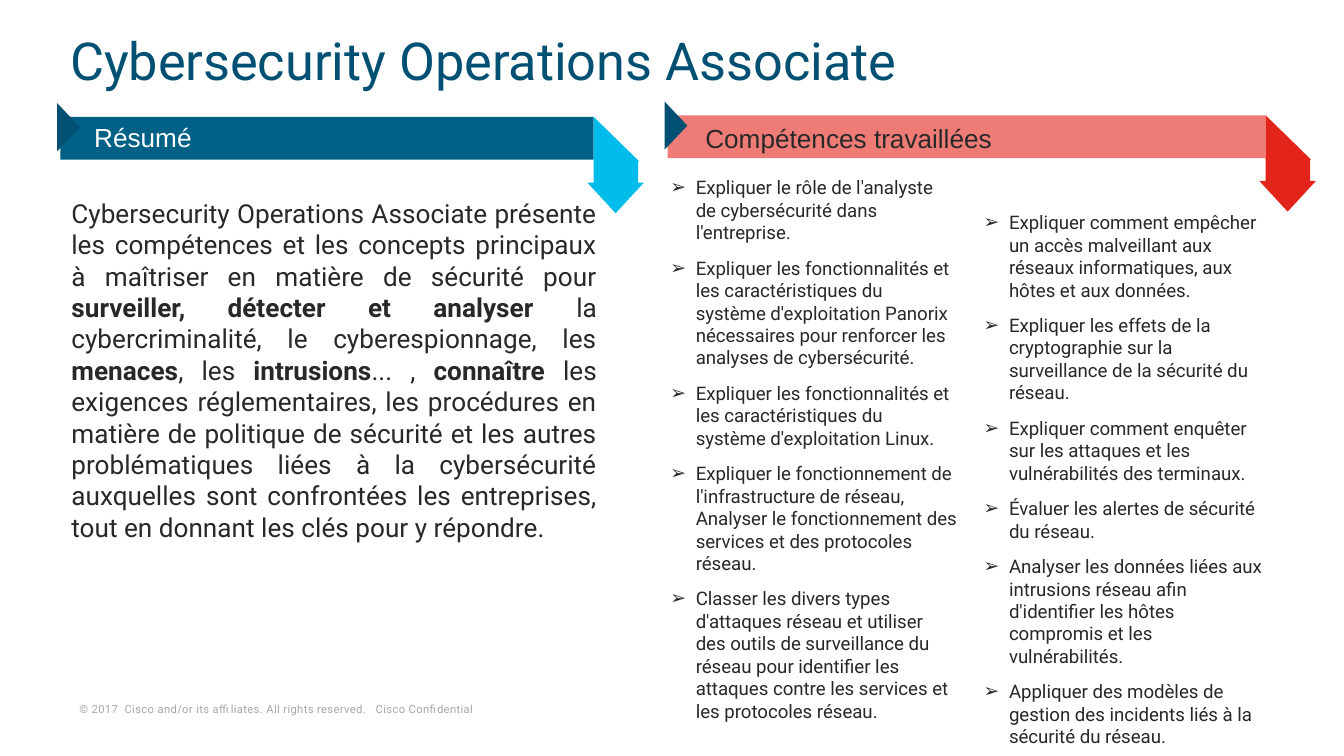
from lxml.etree import SubElement
from pptx import Presentation
from pptx.dml.color import RGBColor
from pptx.enum.shapes import MSO_SHAPE
from pptx.enum.text import MSO_ANCHOR, MSO_AUTO_SIZE, PP_ALIGN
from pptx.oxml.ns import qn
from pptx.util import Cm, Pt

NAVY, TEAL, CYAN = "005073", "006086", "00BCEB"
SALMON, RED = "EF7B76", "E3241B"
INK, WHITE, GREY = "282828", "FFFFFF", "A6A6A6"

TITLE_FONT = {"name": "Roboto", "size": Pt(28)}
BANNER_FONT = {"name": "Arial", "size": Pt(14)}
SUMMARY_FONT = {"name": "Roboto", "size": Pt(14)}
SKILL_FONT = {"name": "Roboto", "size": Pt(10)}
FOOTER_FONT = {"name": "Roboto", "size": Pt(6)}

SUMMARY = [
    ("Cybersecurity Operations Associate présente les compétences et les concepts "
     "principaux à maîtriser en matière de sécurité pour ", False),
    ("surveiller, détecter et analyser ", True),
    ("la cybercriminalité, le cyberespionnage, les ", False),
    ("menaces", True),
    (", les ", False),
    ("intrusions", True),
    ("... , ", False),
    ("connaître", True),
    (" les exigences réglementaires, les procédures en matière de politique de sécurité "
     "et les autres problématiques liées à la cybersécurité auxquelles sont confrontées "
     "les entreprises, tout en donnant les clés pour y répondre.", False),
]

FIRST_SKILLS = [
    "Expliquer le rôle de l'analyste de cybersécurité dans l'entreprise.",
    "Expliquer les fonctionnalités et les caractéristiques du système d'exploitation "
    "Panorix nécessaires pour renforcer les analyses de cybersécurité.",
    "Expliquer les fonctionnalités et les caractéristiques du système d'exploitation Linux.",
    "Expliquer le fonctionnement de l'infrastructure de réseau, Analyser le "
    "fonctionnement des services et des protocoles réseau.",
    "Classer les divers types d'attaques réseau et utiliser des outils de surveillance du "
    "réseau pour identifier les attaques contre les services et les protocoles réseau.",
]

SECOND_SKILLS = [
    "Expliquer comment empêcher un accès malveillant aux réseaux informatiques, "
    "aux hôtes et aux données.",
    "Expliquer les effets de la cryptographie sur la surveillance de la sécurité du réseau.",
    "Expliquer comment enquêter sur les attaques et les vulnérabilités des terminaux.",
    "Évaluer les alertes de sécurité du réseau.",
    "Analyser les données liées aux intrusions réseau afin d'identifier les hôtes "
    "compromis et les vulnérabilités.",
    "Appliquer des modèles de gestion des incidents liés à la sécurité du réseau.",
]


def set_color(color_format, hex_color):
    color_format.rgb = RGBColor.from_string(hex_color)


def format_font(font, values, hex_color):
    for name, value in values.items():
        setattr(font, name, value)
    set_color(font.color, hex_color)


def add_block(slide, kind, box, hex_color, rotation=0):
    shape = slide.shapes.add_shape(kind, *map(Cm, box))
    shape.shadow.inherit = False
    shape.rotation = rotation
    shape.fill.solid()
    set_color(shape.fill.fore_color, hex_color)
    shape.line.fill.background()


def add_text_frame(slide, box, anchor=MSO_ANCHOR.TOP, margin=0):
    frame = slide.shapes.add_textbox(*map(Cm, box)).text_frame
    values = {"word_wrap": True, "vertical_anchor": anchor}
    for side in ("left", "right", "top", "bottom"):
        values[f"margin_{side}"] = Cm(margin)
    for name, value in values.items():
        setattr(frame, name, value)
    return frame


def add_title(slide, box, text):
    title = slide.shapes.title
    for name, value in zip(("left", "top", "width", "height"), box):
        setattr(title, name, Cm(value))
    frame = title.text_frame
    frame.auto_size = MSO_AUTO_SIZE.NONE
    frame.vertical_anchor = MSO_ANCHOR.MIDDLE
    paragraph = frame.paragraphs[0]
    paragraph.alignment = PP_ALIGN.LEFT
    paragraph.line_spacing = 0.8
    run = paragraph.add_run()
    run.text = text
    format_font(run.font, TITLE_FONT, NAVY)


def add_banner(slide, box, text, text_offset, band_color, arrow_color, text_color):
    left, top, width, height = box
    end = left + width
    add_block(slide, MSO_SHAPE.RECTANGLE, box, band_color)
    add_block(slide, MSO_SHAPE.ISOSCELES_TRIANGLE,
              (left - 0.3, top - 0.02, 0.91, 0.43), NAVY, 90)
    add_block(slide, MSO_SHAPE.RIGHT_TRIANGLE, (end, top, 0.86, 0.84), arrow_color)
    add_block(slide, MSO_SHAPE.RECTANGLE, (end, top + 0.82, 0.84, 0.43), arrow_color)
    add_block(slide, MSO_SHAPE.ISOSCELES_TRIANGLE,
              (end - 0.12, top + 1.24, 1.07, 0.58), arrow_color, 180)
    offset_x, offset_y = text_offset
    frame = add_text_frame(slide, (left + offset_x, top + offset_y, width - offset_x, height),
                           MSO_ANCHOR.MIDDLE)
    run = frame.paragraphs[0].add_run()
    run.text = text
    format_font(run.font, BANNER_FONT, text_color)


def add_summary(slide, box, runs):
    paragraph = add_text_frame(slide, box).paragraphs[0]
    paragraph.alignment = PP_ALIGN.JUSTIFY
    for text, bold in runs:
        run = paragraph.add_run()
        run.text = text
        format_font(run.font, SUMMARY_FONT | {"bold": bold}, INK)


def add_skills(slide, box, skills):
    frame = add_text_frame(slide, box)
    for index, skill in enumerate(skills):
        paragraph = frame.add_paragraph() if index else frame.paragraphs[0]
        properties = paragraph._p.get_or_add_pPr()
        properties.set("marL", str(Cm(0.48)))
        properties.set("indent", str(-Cm(0.48)))
        SubElement(properties, qn("a:buFont"), typeface="Arial")
        SubElement(properties, qn("a:buChar"), char="➢")
        paragraph.space_after = Pt(7)
        run = paragraph.add_run()
        run.text = skill
        format_font(run.font, SKILL_FONT, INK)


def add_skill_columns(slide, box, gap, second_drop):
    left, top, width, height = box
    column_width = (width - gap) / 2
    add_skills(slide, (left, top, column_width, height), FIRST_SKILLS)
    add_skills(slide, (left + column_width + gap, top + second_drop,
                       column_width, height - second_drop), SECOND_SKILLS)


def add_footer(slide, box, text):
    frame = add_text_frame(slide, box, MSO_ANCHOR.BOTTOM, 0.08)
    frame.margin_left = frame.margin_right = Cm(0.18)
    run = frame.paragraphs[0].add_run()
    run.text = text
    format_font(run.font, FOOTER_FONT, GREY)
    run.font._element.set("spc", "20")


def main():
    presentation = Presentation()
    presentation.slide_width = Cm(25.4)
    presentation.slide_height = Cm(14.29)
    slide = presentation.slides.add_slide(presentation.slide_layouts[5])
    add_footer(slide, (1.32, 13.18, 9.45, 0.43),
               "© 2017  Cisco and/or its affiliates. All rights reserved.   Cisco Confidential")
    add_title(slide, (1.07, 0.23, 23.19, 2.03), "Cybersecurity Operations Associate")
    add_banner(slide, (1.14, 2.21, 10.08, 0.81), "Résumé", (0.64, -0.02),
               TEAL, CYAN, WHITE)
    add_banner(slide, (12.62, 2.18, 11.3, 0.81), "Compétences travaillées", (0.71, 0.03),
               SALMON, RED, INK)
    add_summary(slide, (1.35, 3.73, 9.93, 6.58), SUMMARY)
    add_skill_columns(slide, (12.67, 3.33, 11.33, 10.46), 0.51, 0.66)
    presentation.save("out.pptx")


if __name__ == "__main__":
    main()
